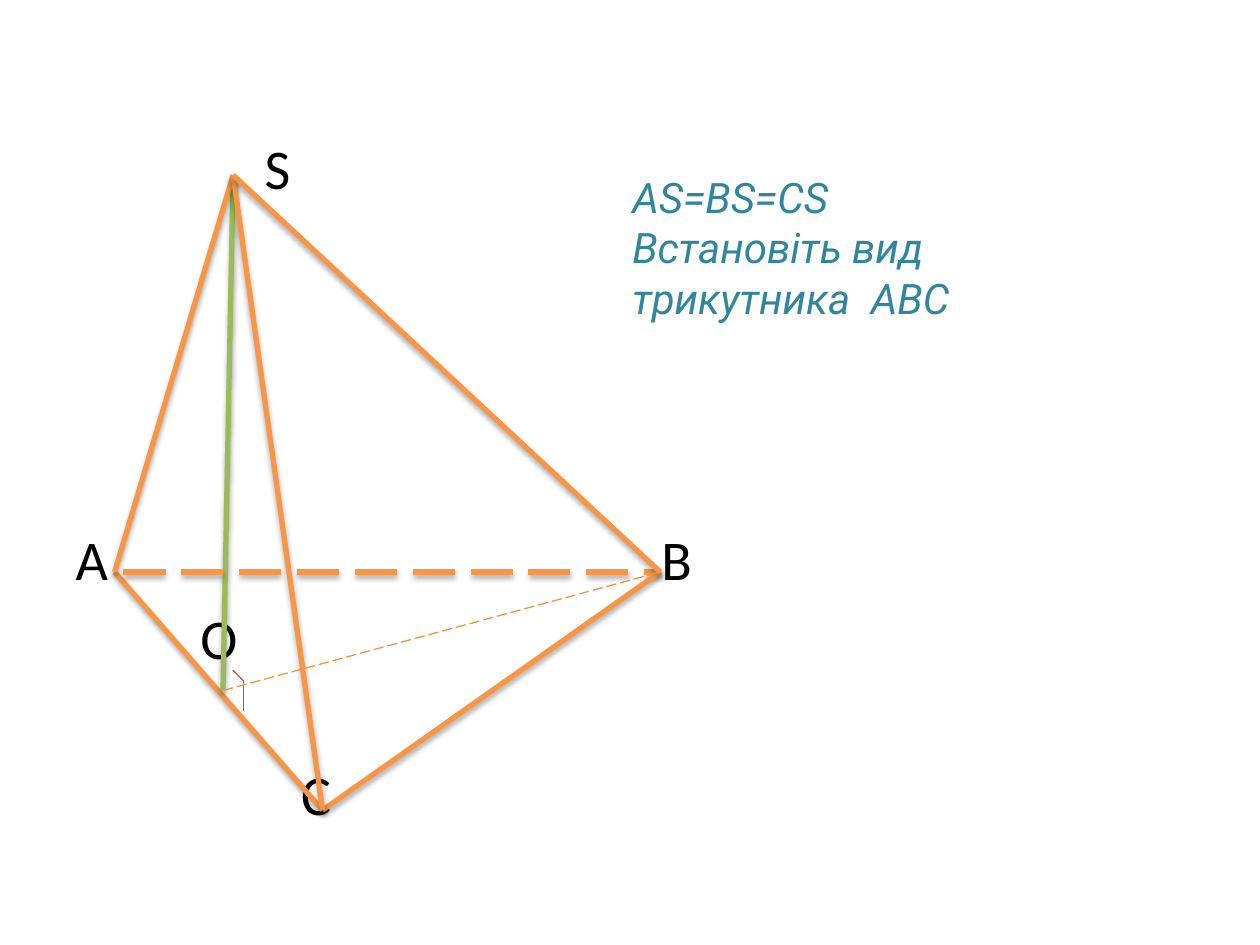
import pptx
import pptx.dml.color
import pptx.enum.dml
import pptx.enum.shapes
import pptx.enum.text
import pptx.oxml
import pptx.util
from pptx.util import Inches

RGB = pptx.dml.color.RGBColor.from_string
DASH = pptx.enum.dml.MSO_LINE.LONG_DASH
theme = {
    "edge": RGB("F79646"),
    "height": RGB("9BBB59"),
    "median": RGB("F69240"),
    "angle": RGB("BF4C48"),
    "label": {"name": "Calibri", "size": pptx.util.Pt(32), "color": RGB("000000")},
    "task": {"name": "Roboto", "size": pptx.util.Pt(24), "color": RGB("31859C"), "italic": True},
    "thick": pptx.util.Pt(3),
    "thin": pptx.util.Pt(0.75),
}
EFFECTS = '<a:effectLst xmlns:a="http://schemas.openxmlformats.org/drawingml/2006/main">%s</a:effectLst>'
SHADOW = (
    '<a:outerShdw blurRad="40000" dist="23000" dir="5400000" rotWithShape="0">'
    '<a:srgbClr val="000000"><a:alpha val="35000"/></a:srgbClr></a:outerShdw>'
)


def add_text(s, box, lines, fmt, inset):
    tf = s.shapes.add_textbox(*map(Inches, box)).text_frame
    tf.word_wrap = True
    tf.vertical_anchor = pptx.enum.text.MSO_ANCHOR.TOP
    if not inset:
        for side in ("left", "top", "right", "bottom"):
            setattr(tf, "margin_" + side, 0)
    for i, line in enumerate(lines):
        p = tf.add_paragraph() if i else tf.paragraphs[0]
        r = p.add_run()
        r.text = line
        for key, value in fmt.items():
            if key == "color":
                r.font.color.rgb = value
            else:
                setattr(r.font, key, value)


def add_line(s, start, end, color, width, dash=None):
    cx = s.shapes.add_connector(
        pptx.enum.shapes.MSO_CONNECTOR.STRAIGHT, *map(Inches, start + end))
    cx.line.color.rgb = color
    cx.line.width = width
    if dash:
        cx.line.dash_style = dash
    effects = EFFECTS % (SHADOW if width == theme["thick"] else "")
    cx._element.spPr.append(pptx.oxml.parse_xml(effects))


prs = pptx.Presentation()
prs.slide_width, prs.slide_height = Inches(10), Inches(7.5)
s = prs.slides.add_slide(prs.slide_layouts[6])

labels = {"S": (2.1, 1.06), "A": (0.6, 4.16), "B": (5.25, 4.16), "O": (1.59, 4.79), "C": (2.39, 6.03)}
for name, corner in labels.items():
    add_text(s, corner + (0.4, 0.54), [name], theme["label"], inset=False)

S, A, B, C, O = (1.85, 1.39), (0.91, 4.54), (5.24, 4.54), (2.56, 6.43), (1.77, 5.48)
base_start, angle_corner = (0.98, 4.54), (1.93, 5.4)

add_line(s, A, C, theme["edge"], theme["thick"])
add_line(s, S, O, theme["height"], theme["thick"])
add_line(s, base_start, B, theme["edge"], theme["thick"], DASH)
for start, end in ((B, C), (S, A), (S, C), (S, B)):
    add_line(s, start, end, theme["edge"], theme["thick"])
for end in ((1.85, 5.32), (1.93, 5.64)):
    add_line(s, angle_corner, end, theme["angle"], theme["thin"])
add_line(s, O, B, theme["median"], theme["thin"], DASH)

task = ["AS=BS=CS", "Встановіть вид", "трикутника  АВС"]
add_text(s, (4.92, 1.31, 3.63, 1.31), task, theme["task"], inset=True)

prs.save("out.pptx")
